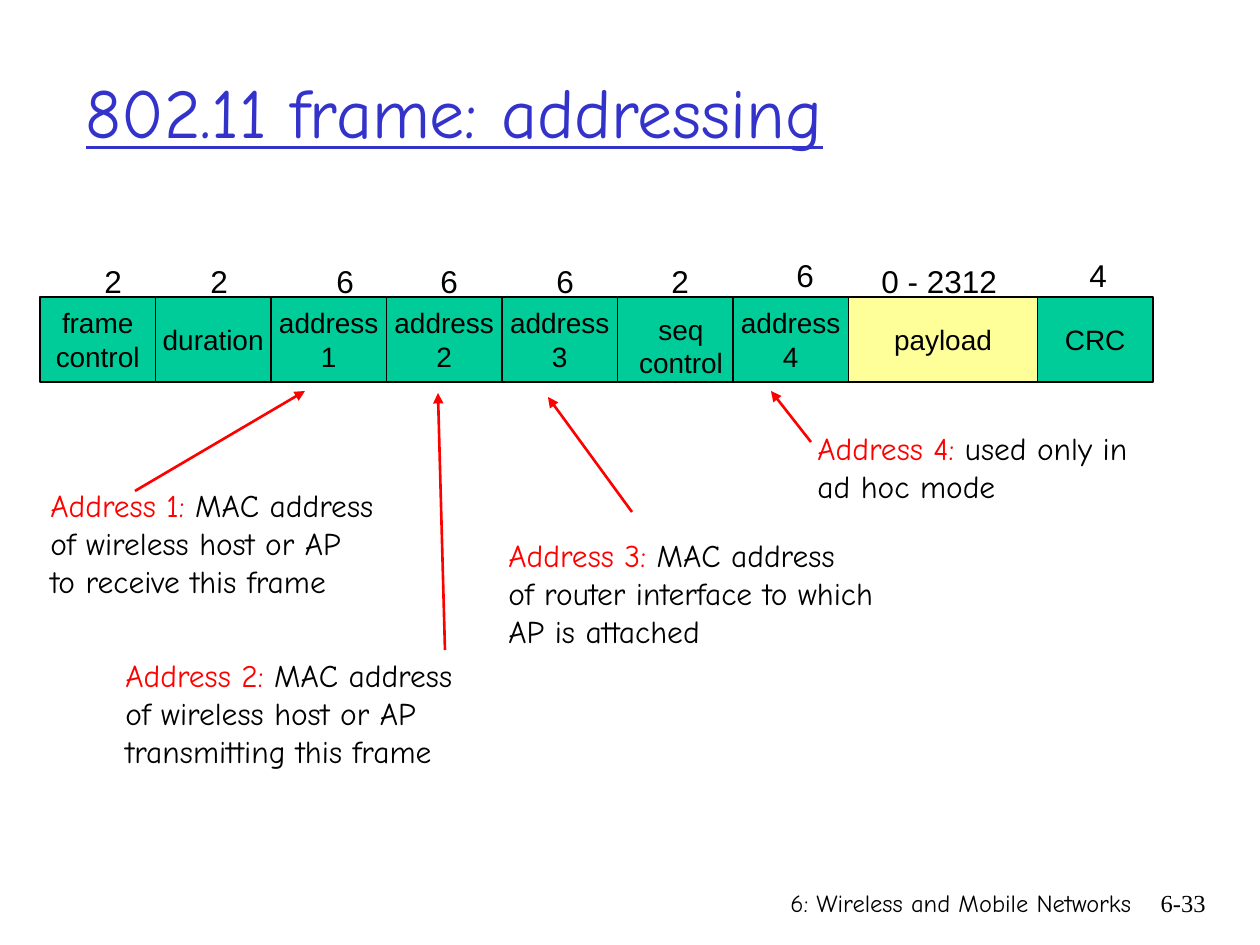
from dataclasses import dataclass
from itertools import accumulate
from typing import NamedTuple

from lxml.etree import SubElement
from pptx import Presentation
from pptx.dml.color import RGBColor
from pptx.enum.shapes import MSO_CONNECTOR as Connector, MSO_SHAPE as Preset
from pptx.enum.text import MSO_ANCHOR as Anchor, MSO_AUTO_SIZE as AutoSize, PP_ALIGN as Align
from pptx.oxml.ns import qn
from pptx.util import Pt

EMU_PER_PX = 914400 / 126


@dataclass(frozen=True)
class Theme:
    ink: RGBColor = RGBColor(0, 0, 0)
    title: RGBColor = RGBColor(0x33, 0x33, 0xCC)
    accent: RGBColor = RGBColor(0xFF, 0, 0)
    header: RGBColor = RGBColor(0, 0xCC, 0x99)
    payload: RGBColor = RGBColor(0xFF, 0xFF, 0x99)
    hand_font: str = "Comic Neue"
    plain_font: str = "Arial"
    number_font: str = "Times New Roman"
    title_size: int = 40
    body_size: int = 18
    field_size: int = 16
    footer_size: int = 14


THEME = Theme()


class Box(NamedTuple):
    left: int
    top: int
    width: int
    height: int


class Field(NamedTuple):
    name: str
    byte_count: str
    count_box: Box
    weight: int = 11
    fill: RGBColor = THEME.header


class Note(NamedTuple):
    label: str
    lines: tuple[str, ...]
    box: Box
    arrow: tuple[int, int, int, int]
    wrap: bool = False


BAR = Box(40, 297, 1113, 85)
SEQUENCE_NAME = "seq\ncontrol"
SEQUENCE_BOX = Box(626, 306, 110, 81)

FIELDS = [
    Field("frame\ncontrol", "2", Box(92, 256, 43, 50)),
    Field("duration", "2", Box(198, 256, 43, 50)),
    Field("address\n1", "6", Box(324, 256, 43, 50)),
    Field("address\n2", "6", Box(428, 256, 43, 50)),
    Field("address\n3", "6", Box(544, 256, 43, 50)),
    Field("", "2", Box(659, 256, 43, 50)),
    Field("address\n4", "6", Box(784, 250, 43, 50)),
    Field("payload", "0 - 2312", Box(869, 256, 141, 50), 18, THEME.payload),
    Field("CRC", "4", Box(1077, 250, 43, 50)),
]

NOTES = [
    Note("Address 1:", (" MAC address", "of wireless host or AP", "to receive this frame"),
         Box(38, 480, 387, 126), (135, 491, 305, 391)),
    Note("Address 2:", (" MAC address", "of wireless host or AP", "transmitting this frame"),
         Box(113, 650, 392, 126), (445, 650, 438, 393)),
    Note("Address 3:", (" MAC address", "of router interface to which AP is attached"),
         Box(496, 530, 421, 126), (632, 512, 548, 397), True),
    Note("Address 4:", (" used only in ad hoc mode",),
         Box(805, 423, 359, 88), (811, 442, 771, 391), True),
]


def px(length: float) -> int:
    return round(length * EMU_PER_PX)


def place(box: Box) -> tuple[int, ...]:
    return tuple(px(length) for length in box)


def style(font, name: str, size: int, color: RGBColor) -> None:
    font.name, font.size = name, Pt(size)
    font.color.rgb = color


def write(frame, text: str, font: str, size: int, align: Align = Align.LEFT) -> None:
    """Fill a text frame with one paragraph per line of text."""
    frame.text = text
    for paragraph in frame.paragraphs:
        paragraph.alignment = align
        style(paragraph.font, font, size, THEME.ink)


def add_text_frame(slide, box: Box, wrap: bool = False):
    frame = slide.shapes.add_textbox(*place(box)).text_frame
    frame.word_wrap = wrap
    return frame


def add_title(slide, text: str) -> None:
    title = slide.shapes.title
    title.left, title.top, title.width, title.height = place(Box(73, 32, 1071, 158))
    frame = title.text_frame
    frame.text = text
    frame.auto_size = AutoSize.NONE
    frame.vertical_anchor = Anchor.MIDDLE
    paragraph = frame.paragraphs[0]
    paragraph.alignment = Align.LEFT
    style(paragraph.font, THEME.hand_font, THEME.title_size, THEME.title)
    paragraph.font.underline = True


def add_field(slide, field: Field, left: float, width: float) -> None:
    shape = slide.shapes.add_shape(
        Preset.RECTANGLE, px(left), px(BAR.top), px(width), px(BAR.height))
    shape.shadow.inherit = False
    shape.fill.solid()
    shape.fill.fore_color.rgb = field.fill
    shape.line.color.rgb = THEME.ink
    shape.line.width = Pt(0.75)
    frame = shape.text_frame
    frame.word_wrap = False
    frame.vertical_anchor = Anchor.MIDDLE
    if field.name:
        write(frame, field.name, THEME.plain_font, THEME.field_size, Align.CENTER)


def add_frame_bar(slide) -> None:
    """Draw the fields edge to edge, each as wide as its weight."""
    unit = BAR.width / sum(field.weight for field in FIELDS)
    starts = accumulate((field.weight for field in FIELDS), initial=0)
    for field, start in zip(FIELDS, starts):
        add_field(slide, field, BAR.left + start * unit, field.weight * unit)
    for field in FIELDS:
        write(add_text_frame(slide, field.count_box), field.byte_count,
              THEME.plain_font, THEME.body_size)
    write(add_text_frame(slide, SEQUENCE_BOX), SEQUENCE_NAME,
          THEME.plain_font, THEME.field_size, Align.CENTER)


def add_arrow(slide, ends: tuple[int, int, int, int]) -> None:
    arrow = slide.shapes.add_connector(Connector.STRAIGHT, *(px(end) for end in ends))
    arrow.line.color.rgb = THEME.accent
    arrow.line.width = Pt(1.5)
    SubElement(arrow.line._get_or_add_ln(), qn("a:tailEnd"), type="triangle")
    SubElement(arrow._element.spPr, qn("a:effectLst"))


def add_note(slide, note: Note) -> None:
    frame = add_text_frame(slide, note.box, note.wrap)
    for index, line in enumerate(note.lines):
        paragraph = frame.add_paragraph() if index else frame.paragraphs[0]
        style(paragraph.font, THEME.hand_font, THEME.body_size, THEME.ink)
        if index == 0:
            label = paragraph.add_run()
            label.text = note.label
            label.font.color.rgb = THEME.accent
        paragraph.add_run().text = line
    add_arrow(slide, note.arrow)


def main() -> None:
    presentation = Presentation()
    presentation.slide_width, presentation.slide_height = px(1260), px(945)
    slide = presentation.slides.add_slide(presentation.slide_layouts.get_by_name("Title Only"))
    write(add_text_frame(slide, Box(612, 882, 532, 63), True),
          "6: Wireless and Mobile Networks", THEME.hand_font, THEME.footer_size, Align.RIGHT)
    write(add_text_frame(slide, Box(1125, 882, 93, 63), True),
          "6-33", THEME.number_font, THEME.footer_size, Align.RIGHT)
    add_frame_bar(slide)
    add_title(slide, "802.11 frame: addressing")
    for note in NOTES:
        add_note(slide, note)
    presentation.save("out.pptx")


if __name__ == "__main__":
    main()
